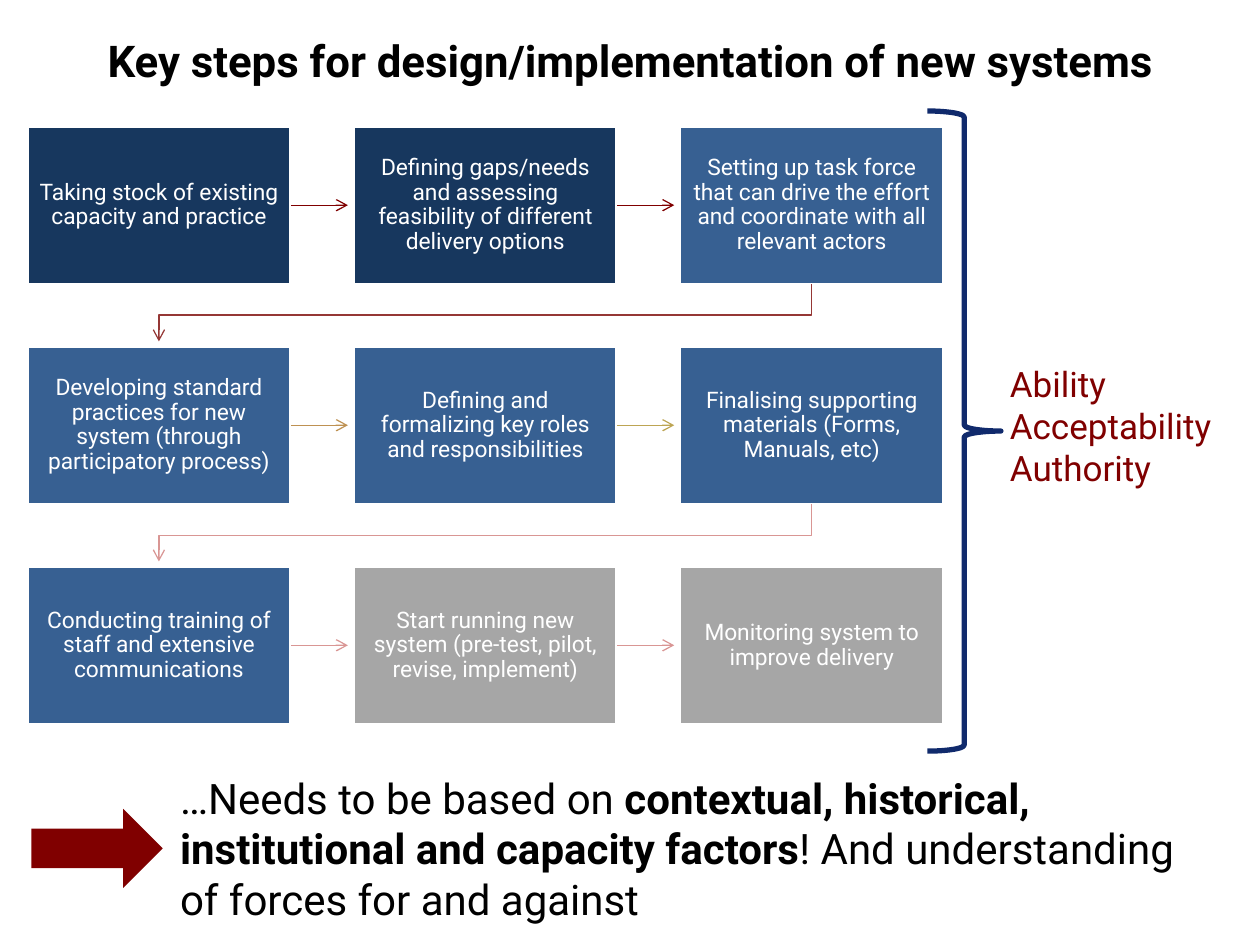
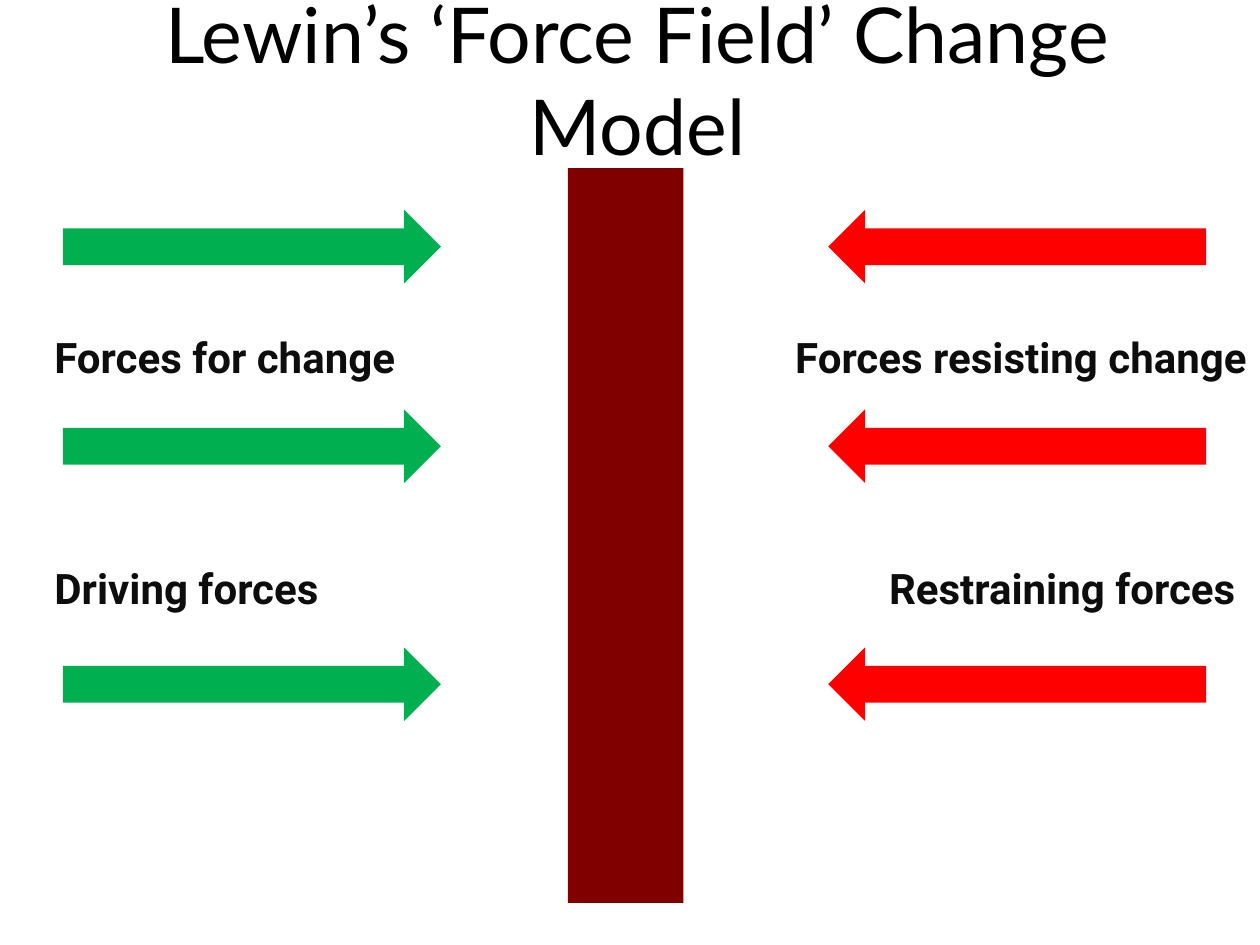
"""Build two slides: the steps for designing new systems and Lewin's force field model."""
from lxml import etree
from pptx import Presentation
from pptx.dml.color import RGBColor
from pptx.enum.shapes import MSO_CONNECTOR as LINK, MSO_SHAPE as SHAPE
from pptx.enum.text import MSO_ANCHOR as ANCHOR, PP_ALIGN as ALIGN
from pptx.oxml.ns import qn
from pptx.util import Pt

hex_color = RGBColor.from_string
MAROON, NAVY, BLUE, GREY, WHITE = "800000", "17375E", "376092", "A6A6A6", "FFFFFF"

TITLE = {"size": Pt(25), "name": "Roboto", "bold": True}
MODEL_TITLE = {"size": Pt(44), "name": "Lato"}
STEP = {"size": Pt(13), "name": "Roboto"}
NOTE = {"size": Pt(24), "name": "Roboto"}
FACTORS = {"size": Pt(20), "name": "Roboto"}
FORCE = {"size": Pt(24), "name": "Roboto", "bold": True}


def add_block(slide, kind, area, fill=None):
    """Add a preset shape, or a text box when kind is None, at an area in points."""
    area = [Pt(length) for length in area]
    if kind is None:
        return slide.shapes.add_textbox(*area)
    block = slide.shapes.add_shape(kind, *area)
    block.shadow.inherit = False
    block.line.fill.background()
    if fill:
        block.fill.solid()
        block.fill.fore_color.rgb = hex_color(fill)
    else:
        block.fill.background()
    return block


def write(block, lines, style, color, align=ALIGN.LEFT, anchor=ANCHOR.TOP):
    """Write lines of text, each a list of pieces of which every second one is bold."""
    frame = block.text_frame
    frame.word_wrap = True
    frame.vertical_anchor = anchor
    for number, pieces in enumerate(lines):
        paragraph = frame.add_paragraph() if number else frame.paragraphs[0]
        paragraph.alignment = align
        for position, piece in enumerate(pieces):
            run = paragraph.add_run()
            run.text = piece
            for attribute, value in style.items():
                setattr(run.font, attribute, value)
            if position % 2:
                run.font.bold = True
            run.font.color.rgb = hex_color(color)


deck = Presentation()
deck.slide_width, deck.slide_height = Pt(720), Pt(540)
steps_slide, model_slide = [deck.slides.add_slide(deck.slide_layouts[6]) for _ in range(2)]

for slide, wording, area, style in [
    (steps_slide, "Key steps for design/implementation of new systems", (0, 12.2, 720, 44.6), TITLE),
    (model_slide, "Lewin’s ‘Force Field’ Change Model", (40.3, 0, 648, 90), MODEL_TITLE),
]:
    write(add_block(slide, None, area), [[wording]], style, "000000", ALIGN.CENTER, ANCHOR.MIDDLE)

LEFT, TOP, WIDTH, HEIGHT = 15.4, 72, 150.8, 90.5
ACROSS, DOWN, REACH = 186.5, 125.75, 32.6
steps = [
    ("Taking stock of existing capacity and practice", NAVY, MAROON),
    ("Defining gaps/needs and assessing feasibility of different delivery options", NAVY, MAROON),
    ("Setting up task force that can drive the effort and coordinate with all relevant actors",
     BLUE, "953735"),
    ("Developing standard practices for new system (through participatory process)", BLUE, "BE9152"),
    ("Defining and formalizing key roles and responsibilities", BLUE, "BDA554"),
    ("Finalising supporting materials (Forms, Manuals, etc)", BLUE, "D99694"),
    ("Conducting training of staff and extensive communications", BLUE, "D99694"),
    ("Start running new system (pre-test, pilot, revise, implement)", GREY, "D99694"),
    ("Monitoring system to improve delivery", GREY, None),
]
for index, (wording, fill, arrow_color) in enumerate(steps):
    row, column = divmod(index, 3)
    x, y = LEFT + column * ACROSS, TOP + row * DOWN
    step = add_block(steps_slide, SHAPE.RECTANGLE, (x, y, WIDTH, HEIGHT), fill)
    step.line.color.rgb = hex_color(WHITE)
    step.line.width = Pt(2)
    for side in ("left", "top", "right", "bottom"):
        setattr(step.text_frame, f"margin_{side}", Pt(7.2))
    write(step, [[wording]], STEP, WHITE, ALIGN.CENTER, ANCHOR.MIDDLE)
    step.text_frame.paragraphs[0].line_spacing = 0.9
    if arrow_color is None:
        continue
    if column < 2:
        middle = y + HEIGHT / 2
        arrow = steps_slide.shapes.add_connector(
            LINK.STRAIGHT, Pt(x + WIDTH), Pt(middle), Pt(x + WIDTH + REACH), Pt(middle))
        arrow.begin_connect(step, 3)
        etree.SubElement(arrow._element.spPr, qn("a:effectLst"))
    else:
        start, end, bottom = x + WIDTH / 2, LEFT + WIDTH / 2, y + HEIGHT
        route = steps_slide.shapes.build_freeform(Pt(start), Pt(bottom))
        turns = [(start, bottom + 17.6), (end, bottom + 17.6), (end, bottom + REACH)]
        route.add_line_segments([(Pt(a), Pt(b)) for a, b in turns], close=False)
        arrow = route.convert_to_shape()
        arrow.fill.background()
        arrow.shadow.inherit = False
    arrow.line.color.rgb = hex_color(arrow_color)
    arrow.line.width = Pt(0.75)
    etree.SubElement(arrow.line._get_or_add_ln(), qn("a:tailEnd"), type="arrow")

add_block(steps_slide, SHAPE.RIGHT_ARROW, (18, 462.2, 75, 45.2), MAROON)
write(add_block(steps_slide, None, (95.8, 437.8, 593.3, 94.3)),
      [["…Needs to be based on ", "contextual, historical, institutional and capacity factors",
        "! And understanding of forces for and against"]], NOTE, "000000")
write(add_block(steps_slide, None, (570, 203.8, 150, 80)),
      [["Ability"], ["Acceptability"], ["Authority"]], FACTORS, MAROON)
brace = add_block(steps_slide, SHAPE.RIGHT_BRACE, (530, 63.4, 42, 365.8))
brace.line.color.rgb = hex_color("102A6C")
brace.line.width = Pt(3)

for wording, area, align in [
    ("Driving forces", (24, 318, 240, 36), ALIGN.LEFT),
    ("Forces for change", (24, 186, 245, 36), ALIGN.LEFT),
    ("Forces resisting change", (407.5, 186, 312, 36), ALIGN.RIGHT),
    ("Restraining forces", (473, 318, 240, 36), ALIGN.RIGHT),
]:
    label = add_block(model_slide, SHAPE.RECTANGLE, area, WHITE)
    write(label, [[wording]], FORCE, "0D0D0D", align)

for y in (120, 234, 370):
    add_block(model_slide, SHAPE.RIGHT_ARROW, (36, y, 216, 42), "00B050")
    add_block(model_slide, SHAPE.LEFT_ARROW, (473.3, y, 216, 42), "FF0000")
add_block(model_slide, SHAPE.RECTANGLE, (324.5, 96, 66, 420), MAROON)

deck.save("out.pptx")
